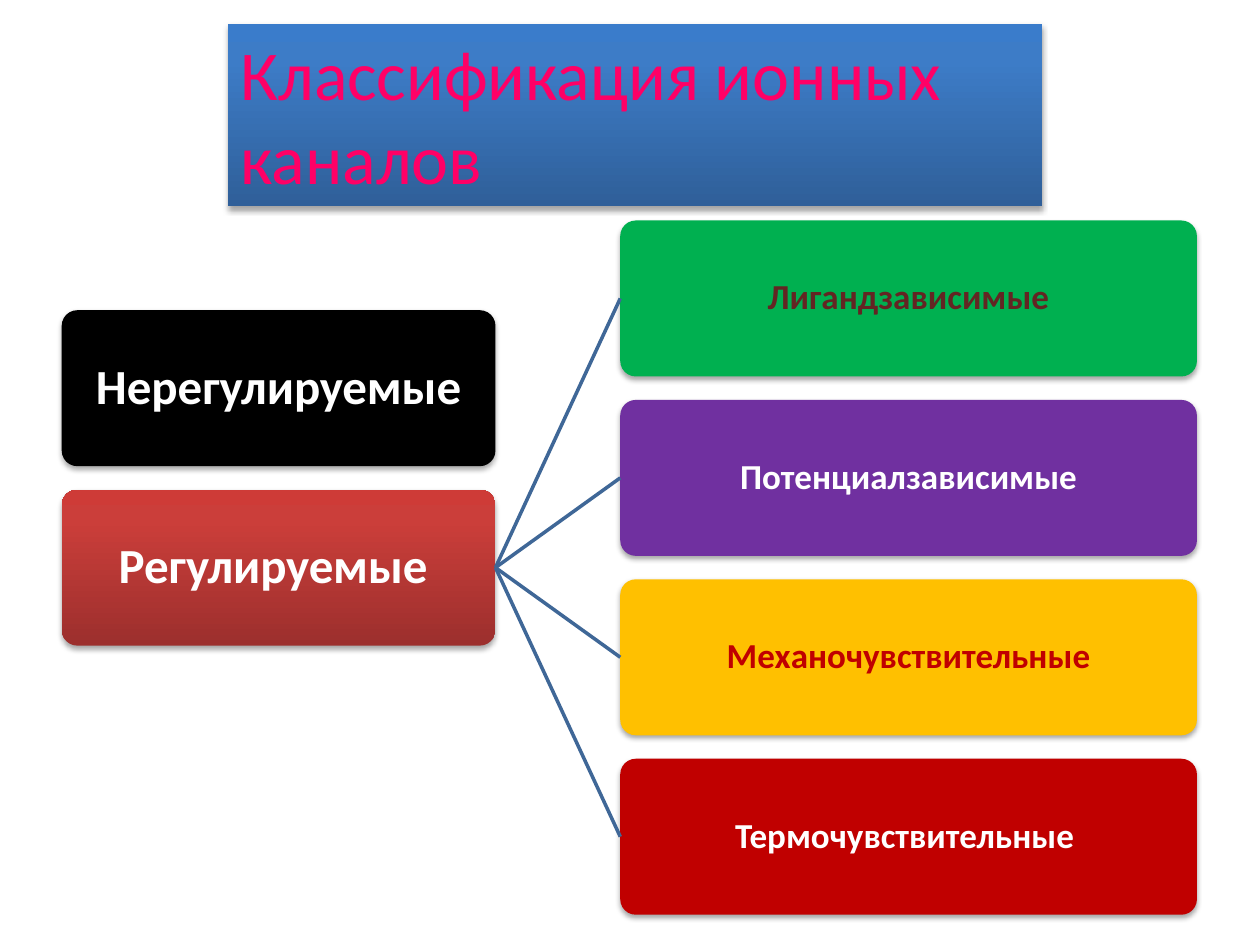
import copy

import pptx
import pptx.dml.color
import pptx.enum.shapes
import pptx.enum.text
import pptx.oxml
import pptx.oxml.ns
import pptx.util

COLORS = {
    "title": "FF0066",
    "blue_dark": "2F5F99", "blue_mid": "3D7CC7", "blue_light": "3A7CCB",
    "red_dark": "9C2F2D", "red_mid": "CB3E3A", "red_light": "CE3B37",
    "black": "000000", "white": "FFFFFF", "green": "00B050",
    "purple": "7030A0", "amber": "FFC000", "crimson": "C00000",
    "brown": "632523", "line": "3F6797",
}
BLUE_GRADIENT = ("blue_dark", "blue_mid", "blue_light")
RED_GRADIENT = ("red_dark", "red_mid", "red_light")
GRADIENT_POSITIONS = (0, 0.8, 1)

TITLE_BOX = (0.181, 0.0253, 0.646, 0.1933)
DIAGRAM_BOX = (0.049, 0.2333, 0.901, 0.7347)

GROUPS = [
    ("Нерегулируемые", "black"),
    ("Регулируемые ", RED_GRADIENT),
]
CHANNELS = [
    ("Лигандзависимые", "green", "brown"),
    ("Потенциалзависимые", "purple", "white"),
    ("Механочувствительные", "amber", "crimson"),
    ("Термочувствительные ", "crimson", "white"),
]
ROW_GAP = 0.15
GROUP_WIDTH = 2.78
COLUMN_GAP = 0.8


def rgb(name):
    return pptx.dml.color.RGBColor.from_string(COLORS[name])


def scale_box(presentation, shares):
    left, top, width, height = shares
    return (int(left * presentation.slide_width), int(top * presentation.slide_height),
            int(width * presentation.slide_width), int(height * presentation.slide_height))


def paint(shape, color):
    if isinstance(color, str):
        shape.fill.solid()
        shape.fill.fore_color.rgb = rgb(color)
        return
    shape.fill.gradient()
    shape.fill.gradient_angle = 90
    stop_list = shape._element.spPr.find(".//" + pptx.oxml.ns.qn("a:gsLst"))
    stop_list.append(copy.deepcopy(stop_list[-1]))
    for stop, name, position in zip(shape.fill.gradient_stops, color, GRADIENT_POSITIONS):
        stop.color.rgb = rgb(name)
        stop.position = position


def add_shadow(shape):
    shape.shadow.inherit = False
    effects = shape._element.spPr.find(pptx.oxml.ns.qn("a:effectLst"))
    effects.append(pptx.oxml.parse_xml(
        f'<a:outerShdw {pptx.oxml.ns.nsdecls("a")} blurRad="40000" dist="23000" '
        'dir="5400000" rotWithShape="0"><a:srgbClr val="000000">'
        '<a:alpha val="35000"/></a:srgbClr></a:outerShdw>'))


def add_panel(slide, kind, box, color):
    shape = slide.shapes.add_shape(kind, *box)
    paint(shape, color)
    shape.line.fill.background()
    add_shadow(shape)
    shape.text_frame.word_wrap = True
    return shape


def write(paragraph, text, size, color, bold):
    run = paragraph.add_run()
    run.text = text
    run.font.name = "Calibri"
    run.font.size = pptx.util.Pt(size)
    run.font.bold = bold
    run.font.color.rgb = rgb(color)


def add_title(slide, box):
    shape = add_panel(slide, pptx.enum.shapes.MSO_SHAPE.RECTANGLE, box, BLUE_GRADIENT)
    shape.text_frame.vertical_anchor = pptx.enum.text.MSO_ANCHOR.TOP
    paragraph = shape.text_frame.paragraphs[0]
    paragraph.alignment = pptx.enum.text.PP_ALIGN.LEFT
    write(paragraph, "Классификация ионных каналов", 40, "title", False)


def add_node(slide, box, text, fill, size, text_color):
    shape = add_panel(slide, pptx.enum.shapes.MSO_SHAPE.ROUNDED_RECTANGLE, box, fill)
    shape.adjustments[0] = 0.1
    frame = shape.text_frame
    frame.vertical_anchor = pptx.enum.text.MSO_ANCHOR.MIDDLE
    frame.margin_left = frame.margin_right = pptx.util.Inches(0.02)
    frame.margin_top = frame.margin_bottom = pptx.util.Inches(0.02)
    paragraph = frame.paragraphs[0]
    paragraph.alignment = pptx.enum.text.PP_ALIGN.CENTER
    paragraph.line_spacing = 0.9
    write(paragraph, text, size, text_color, True)
    return shape


def add_branch(slide, parent, child):
    connector = slide.shapes.add_connector(
        pptx.enum.shapes.MSO_CONNECTOR.STRAIGHT, 0, 0, 0, 0)
    connector.begin_connect(parent, 3)
    connector.end_connect(child, 1)
    connector.line.color.rgb = rgb("line")
    connector.line.width = pptx.util.Pt(2)
    connector._element.spPr.append(pptx.oxml.parse_xml(
        f'<a:effectLst {pptx.oxml.ns.nsdecls("a")}/>'))


def add_diagram(slide, box):
    left, top, width, height = box
    count = len(CHANNELS)
    row = height / (count + (count - 1) * ROW_GAP)
    pitch = row * (1 + ROW_GAP)
    group_width = row * GROUP_WIDTH
    channel_offset = row * (GROUP_WIDTH + COLUMN_GAP)
    first_group = (count - len(GROUPS) - 1) / 2

    for index, (text, fill) in enumerate(GROUPS):
        group_top = top + (first_group + index) * pitch
        group_box = (int(left), int(group_top), int(group_width), int(row))
        parent = add_node(slide, group_box, text, fill, 28, "white")

    for index, (text, fill, text_color) in enumerate(CHANNELS):
        channel_box = (int(left + channel_offset), int(top + index * pitch),
                       int(width - channel_offset), int(row))
        channel = add_node(slide, channel_box, text, fill, 20, text_color)
        add_branch(slide, parent, channel)


def main():
    presentation = pptx.Presentation()
    presentation.slide_width = pptx.util.Inches(10)
    presentation.slide_height = pptx.util.Inches(7.5)
    slide = presentation.slides.add_slide(presentation.slide_layouts[6])
    add_title(slide, scale_box(presentation, TITLE_BOX))
    add_diagram(slide, scale_box(presentation, DIAGRAM_BOX))
    presentation.save("out.pptx")


if __name__ == "__main__":
    main()
